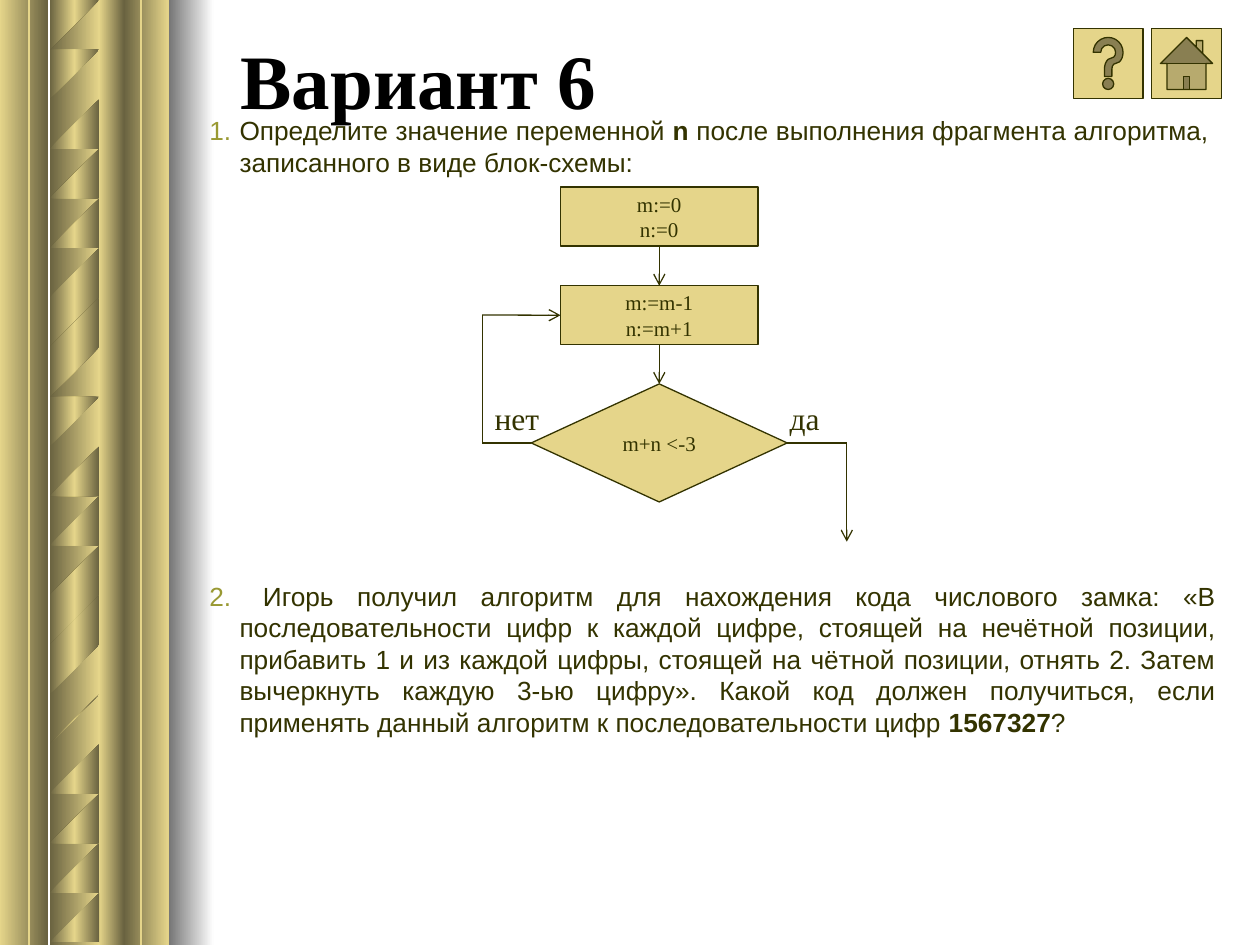
from copy import deepcopy

from lxml.etree import SubElement
from pptx import Presentation
from pptx.dml.color import RGBColor
from pptx.enum.shapes import MSO_CONNECTOR as Link, MSO_SHAPE as Kind
from pptx.enum.text import MSO_ANCHOR as Anchor, PP_ALIGN as Align
from pptx.oxml.ns import qn
from pptx.util import Cm, Pt

GOLD = RGBColor(0xE5, 0xD5, 0x8A)
BRONZE = RGBColor(0x69, 0x62, 0x40)
OLIVE = RGBColor(0x33, 0x33, 0x00)
KHAKI = RGBColor(0x99, 0x99, 0x33)
GRAY = RGBColor(0x75, 0x75, 0x75)
WHITE = RGBColor(0xFF, 0xFF, 0xFF)
BLACK = RGBColor(0, 0, 0)
SERIF, SANS = "Times New Roman", "Arial"
WIDTH, HEIGHT = 25.4, 19.05

# Left, width and gradient of each upright strip, in cm
STRIPS = [
    (2, 0.5, (GOLD, BRONZE)),
    (0, 0.96, (GOLD, BRONZE)),
    (1, 1, (BRONZE, GOLD)),
    (2.5, 0.9, (BRONZE, GOLD)),
    (3.4, 0.91, (GRAY, WHITE)),
]
# Outline of one turn of the twisted column, y counted from its top
TWIST = [
    (2.49, 0.23), (2.49, 0.85), (2.46, 0.83), (2.36, 0.83), (2.31, 0.85),
    (2.24, 0.92), (2.06, 1.15), (1.63, 1.61), (1.19, 2.09), (1.12, 2.22),
    (1.04, 2.36), (1.02, 2.57), (0.98, 2.85), (0.98, 1.61), (0.98, 1.73),
    (1.02, 1.78), (1.07, 1.81), (1.12, 1.82), (1.17, 1.82), (1.24, 1.79),
    (2.11, 0.84), (2.29, 0.61), (2.36, 0.49), (2.41, 0.36), (2.46, 0.17),
    (2.49, 0), (2.49, 0.52),
]
TOPS = [-1.57, -0.33, 0.93, 2.19, 3.32, 4.45, 5.58, 6.71, 7.92,
        9.17, 10.43, 11.63, 12.83, 13.95, 15.08, 16.21, 17.34, 18.42]

TASKS = [
    [("Определите значение переменной ", False), ("n ", True),
     ("после выполнения фрагмента алгоритма,  записанного в виде "
      "блок-схемы:", False)],
    [(" Игорь получил алгоритм для нахождения кода числового замка: "
      "«В последовательности цифр к каждой цифре, стоящей на нечётной "
      "позиции, прибавить 1 и из каждой цифры, стоящей на чётной позиции, "
      "отнять 2. Затем вычеркнуть каждую 3-ью цифру». Какой код должен "
      "получиться, если применять данный алгоритм к последовательности "
      "цифр ", False), ("1567327", True), ("?", False)],
]


class Deck:
    def __init__(self):
        self.file = Presentation()
        self.file.slide_width, self.file.slide_height = Cm(WIDTH), Cm(HEIGHT)
        self.slide = self.file.slides.add_slide(self.file.slide_layouts[6])
        self.shapes = self.slide.shapes

    def style(self, part, size, color=OLIVE, face=SERIF, bold=None):
        font = part.font
        font.size, font.name, font.bold = Pt(size), face, bold
        font.color.rgb = color

    def blend(self, shape, colors):
        """Fill a shape from left to right with evenly spaced colours."""
        shape.shadow.inherit = False
        shape.line.fill.background()
        shape.fill.gradient()
        shape.fill.gradient_angle = 0
        stops = shape._element.spPr.find(".//" + qn("a:gsLst"))
        for _ in colors[2:]:
            stops.append(deepcopy(stops[-1]))
        for i, (stop, color) in enumerate(zip(shape.fill.gradient_stops, colors)):
            stop.color.rgb = color
            stop.position = i / (len(colors) - 1)

    def strip(self, left, width, colors):
        shape = self.shapes.add_shape(
            Kind.RECTANGLE, Cm(left), 0, Cm(width), Cm(HEIGHT))
        self.blend(shape, colors)

    def twist(self, top):
        """Draw the part of one turn that lies on the slide."""
        points = [(x, top + y) for x, y in TWIST if 0 <= top + y <= HEIGHT]
        pen = self.shapes.build_freeform(*points[0], scale=Cm(1))
        pen.add_line_segments(points[1:])
        self.blend(pen.convert_to_shape(), (BRONZE, GOLD, BRONZE))

    def block(self, kind, left, top, width, height, lines=()):
        shape = self.shapes.add_shape(
            kind, Cm(left), Cm(top), Cm(width), Cm(height))
        shape.shadow.inherit = False
        shape.fill.solid()
        shape.fill.fore_color.rgb = GOLD
        shape.line.color.rgb, shape.line.width = OLIVE, Pt(0.75)
        frame = shape.text_frame
        frame.vertical_anchor = Anchor.MIDDLE
        for i, line in enumerate(lines):
            para = frame.add_paragraph() if i else frame.paragraphs[0]
            para.text, para.alignment = line, Align.CENTER
            self.style(para, 12)
        return shape

    def line(self, start, end, color=OLIVE, width=0.75, arrow=False):
        """Join two ends, each a point in cm or a (shape, side) pair."""
        fixed = [isinstance(p[0], (int, float)) for p in (start, end)]
        a, b = [tuple(map(Cm, p)) if ok else (0, 0)
                for p, ok in zip((start, end), fixed)]
        link = self.shapes.add_connector(Link.STRAIGHT, *a, *b)
        if not fixed[0]:
            link.begin_connect(*start)
        if not fixed[1]:
            link.end_connect(*end)
        link.line.color.rgb, link.line.width = color, Pt(width)
        if arrow:
            SubElement(link.line._get_or_add_ln(), qn("a:tailEnd"), type="arrow")
        SubElement(link._element.spPr, qn("a:effectLst"))

    def frame(self, left, top, width, height):
        box = self.shapes.add_textbox(Cm(left), Cm(top), Cm(width), Cm(height))
        box.text_frame.word_wrap = True
        return box.text_frame

    def label(self, text, left, top, width, height, size, color=OLIVE, bold=None):
        frame = self.frame(left, top, width, height)
        frame.vertical_anchor = Anchor.MIDDLE
        para = frame.paragraphs[0]
        para.text = text
        self.style(para, size, color, bold=bold)

    def tasks(self, items, left, top, width, height, gap):
        """Write a numbered list with a gap in points between its items."""
        frame = self.frame(left, top, width, height)
        for i, runs in enumerate(items):
            para = frame.add_paragraph() if i else frame.paragraphs[0]
            props = para._p.get_or_add_pPr()
            props.set("marL", str(Cm(0.61)))
            props.set("indent", str(-Cm(0.61)))
            tint = SubElement(props, qn("a:buClr"))
            SubElement(tint, qn("a:srgbClr"), val=str(KHAKI))
            SubElement(props, qn("a:buFont"), typeface=SANS)
            SubElement(props, qn("a:buAutoNum"), type="arabicPeriod")
            para.alignment, para.line_spacing = Align.JUSTIFY, Pt(18)
            para.space_before = Pt(gap if i else 0)
            for text, bold in runs:
                run = para.add_run()
                run.text = text
                self.style(run, 15, face=SANS, bold=bold)


def main():
    deck = Deck()
    for strip in STRIPS:
        deck.strip(*strip)
    for top in TOPS:
        deck.twist(top)
    for x in (0.58, 2.84):
        deck.line((x, 0), (x, HEIGHT), GOLD, 1)

    deck.label("Вариант 6", 4.6, 0, 20.8, 3.18, 44, BLACK, True)
    deck.block(Kind.ACTION_BUTTON_HOME, 23.22, 0.58, 1.4, 1.4)
    deck.block(Kind.ACTION_BUTTON_HELP, 21.64, 0.58, 1.4, 1.4)
    deck.tasks(TASKS, 3.97, 2.18, 20.8, 16.28, 230)

    init = deck.block(Kind.RECTANGLE, 11.3, 3.77, 3.98, 1.19, ["m:=0", "n:=0"])
    step = deck.block(Kind.RECTANGLE, 11.3, 5.76, 3.98, 1.19,
                      ["m:=m-1", "n:=m+1"])
    test = deck.block(Kind.DIAMOND, 10.71, 7.74, 5.16, 2.38, ["m+n <-3"])
    back, out, mid, loop = 9.72, 17.07, 8.93, 6.35
    deck.line((init, 2), (step, 0), arrow=True)
    deck.line((step, 2), (test, 0), arrow=True)
    deck.line((test, 1), (back, mid))
    deck.line((back, mid), (back, loop))
    deck.line((back, loop), (step, 1), arrow=True)
    deck.line((test, 3), (out, mid))
    deck.line((out, mid), (out, 10.92), arrow=True)
    for text, left in (("нет", back), ("да", 15.67)):
        deck.label(text, left, 7.92, 1.98, 1.02, 18)

    deck.file.save("out.pptx")


if __name__ == "__main__":
    main()
